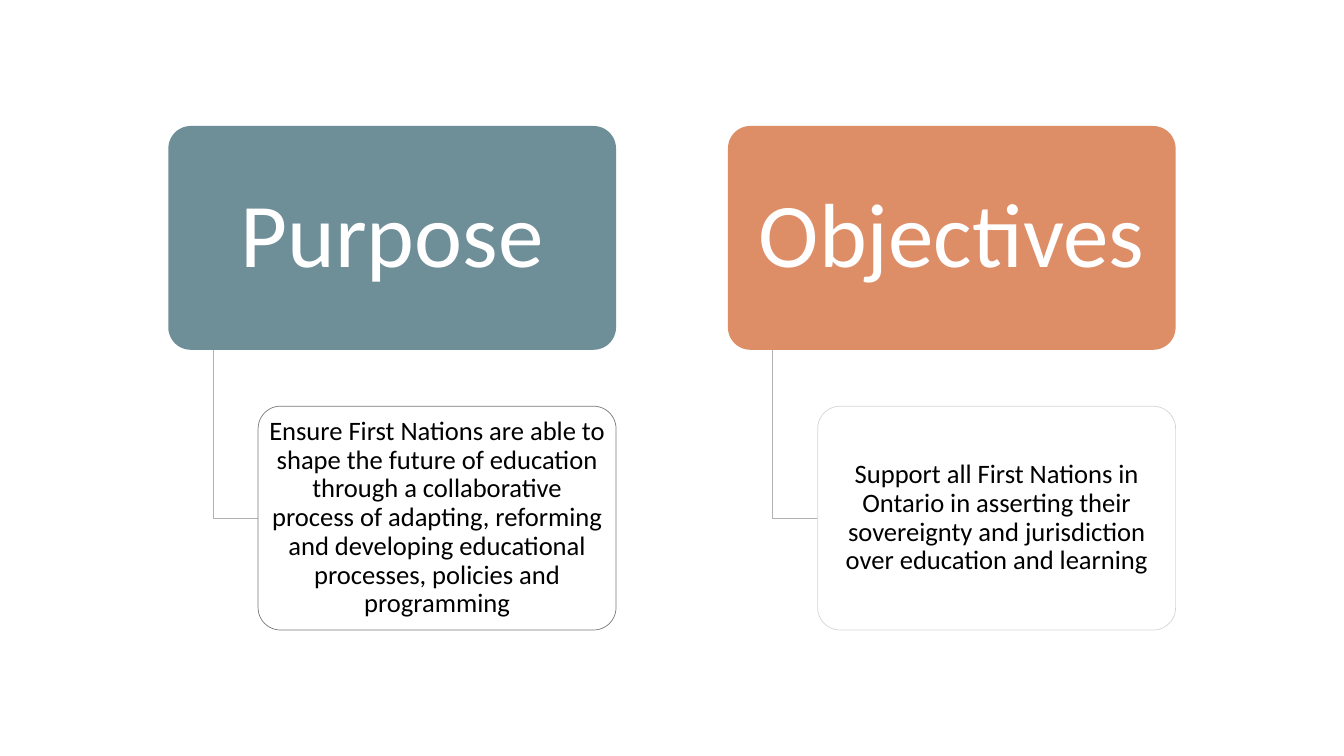
import pptx
import pptx.dml.color
import pptx.enum.shapes
import pptx.enum.text
import pptx.oxml.ns
import pptx.util
from lxml import etree

Inches = pptx.util.Inches
Pt = pptx.util.Pt

CARD_H = 2.22
COLUMN_W = 4.44
DETAIL_INDENT = 0.89
DETAIL_DROP = 2.78

COLUMNS = [
    (1.67, "Purpose", "6E8E98", "7A7A7A",
     "Ensure First Nations are able to shape the future of education through "
     "a collaborative process of adapting, reforming and developing "
     "educational processes, policies and programming"),
    (7.22, "Objectives", "DE8E67", "D6D6D6",
     "Support all First Nations in Ontario in asserting their sovereignty and "
     "jurisdiction over education and learning"),
]


def rgb(color):
    return pptx.dml.color.RGBColor.from_string(color)


def set_opacity(sp, percent):
    color = sp.fill._xPr.find(".//" + pptx.oxml.ns.qn("a:srgbClr"))
    alpha = etree.SubElement(color, pptx.oxml.ns.qn("a:alpha"))
    alpha.set("val", str(percent * 1000))


def add_card(s, left, top, width, text, size, color, fill, inset_x, inset_y):
    """Add a borderless rounded card with centred text."""
    sp = s.shapes.add_shape(
        pptx.enum.shapes.MSO_SHAPE.ROUNDED_RECTANGLE,
        Inches(left), Inches(top), Inches(width), Inches(CARD_H))
    sp.adjustments[0] = 0.1
    sp.shadow.inherit = False
    sp.fill.solid()
    sp.fill.fore_color.rgb = rgb(fill)
    sp.line.fill.background()

    tf = sp.text_frame
    tf.word_wrap = True
    tf.vertical_anchor = pptx.enum.text.MSO_ANCHOR.MIDDLE
    tf.margin_left = tf.margin_right = Inches(inset_x)
    tf.margin_top = tf.margin_bottom = Inches(inset_y)
    p = tf.paragraphs[0]
    p.alignment = pptx.enum.text.PP_ALIGN.CENTER
    p.line_spacing = 0.9
    r = p.add_run()
    r.text = text
    r.font.name = "Calibri"
    r.font.size = Pt(size)
    r.font.color.rgb = rgb(color)
    return sp


def set_line(sp, color):
    sp.line.color.rgb = rgb(color)
    sp.line.width = Pt(0.5)


def add_elbow(s, left, top, right, bottom):
    builder = s.shapes.build_freeform(Inches(left), Inches(top))
    builder.add_line_segments(
        [(Inches(left), Inches(bottom)), (Inches(right), Inches(bottom))],
        close=False)
    sp = builder.convert_to_shape()
    sp.shadow.inherit = False
    sp.fill.background()
    set_line(sp, "B1B1B1")


def add_column(s, left, top, heading, fill, border, detail):
    """Add a heading card with a detail card hanging from it."""
    detail_left = left + DETAIL_INDENT
    detail_top = top + DETAIL_DROP
    add_card(s, left, top, COLUMN_W, heading, 65, "FFFFFF", fill, 0.14, 0.09)
    add_elbow(s, left + DETAIL_INDENT / 2, top + CARD_H,
              detail_left, detail_top + CARD_H / 2)
    sp = add_card(s, detail_left, detail_top, COLUMN_W - DETAIL_INDENT,
                  detail, 19, "000000", "FFFFFF", 0.04, 0.03)
    set_opacity(sp, 90)
    set_line(sp, border)


def main():
    prs = pptx.Presentation()
    prs.slide_width = Inches(13.33)
    prs.slide_height = Inches(7.5)
    s = prs.slides.add_slide(prs.slide_layouts[6])
    for left, heading, fill, border, detail in COLUMNS:
        add_column(s, left, 1.25, heading, fill, border, detail)
    prs.save("out.pptx")


if __name__ == "__main__":
    main()
